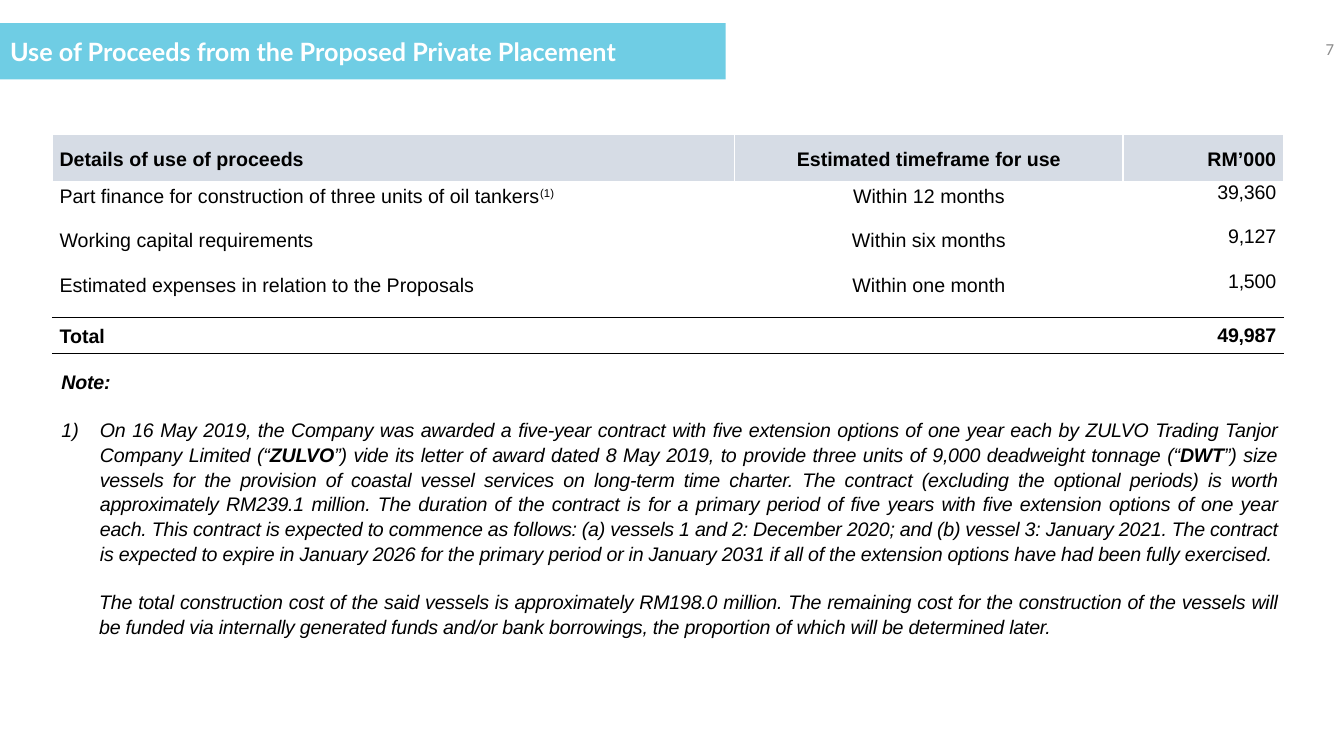
from pptx import Presentation
from pptx import util as u
from pptx.dml.color import RGBColor
from pptx.enum import text
from pptx.oxml import parse_xml
from pptx.oxml.ns import nsdecls

LEFT, CENTER, RIGHT, JUSTIFY = (
    text.PP_ALIGN.LEFT, text.PP_ALIGN.CENTER, text.PP_ALIGN.RIGHT, text.PP_ALIGN.JUSTIFY)
TOP, MIDDLE = text.MSO_ANCHOR.TOP, text.MSO_ANCHOR.MIDDLE

HEADINGS = ["Details of use of proceeds", "Estimated timeframe for use", "RM’000"]
USES = [
    ["Part finance for construction of three units of oil tankers", "Within 12 months", "39,360"],
    ["Working capital requirements", "Within six months", "9,127"],
    ["Estimated expenses in relation to the Proposals", "Within one month", "1,500"],
]
TOTAL = ["Total", "", "49,987"]
CONTRACT = [
    ("On 16 May 2019, the Company was awarded a five-year contract with five extension options "
     "of one year each by ZULVO Trading Tanjor Company Limited (“", False),
    ("ZULVO", True),
    ("”) vide its letter of award dated 8 May 2019, to provide three units of 9,000 deadweight "
     "tonnage (“", False),
    ("DWT", True),
    ("”) size vessels for the provision of coastal vessel services on long-term time charter. "
     "The contract (excluding the optional periods) is worth approximately RM239.1 million. "
     "The duration of the contract is for a primary period of five years with five extension "
     "options of one year each. This contract is expected to commence as follows: (a) vessels 1 "
     "and 2: December 2020; and (b) vessel 3: January 2021. The contract is expected to expire "
     "in January 2026 for the primary period or in January 2031 if all of the extension options "
     "have had been fully exercised.", False),
]
COST = [
    ("The total construction cost of the said vessels is approximately RM198.0 million. "
     "The remaining cost for the construction of the vessels will be funded via internally "
     "generated funds and/or bank borrowings, the proportion of which will be determined later.",
     False),
]


def color(value):
    return RGBColor.from_string(value)


def write(para, words, font="Arial", size=14, ink="000000", bold=False, italic=False,
          spacing=0, baseline=0):
    span = para.add_run()
    span.text = words
    span.font.name, span.font.size = font, u.Pt(size)
    span.font.bold, span.font.italic = bold, italic
    span.font.color.rgb = color(ink)
    properties = span._r.get_or_add_rPr()
    if spacing:
        properties.set("spc", str(spacing))
    if baseline:
        properties.set("baseline", str(baseline))


class ProceedsSlide:
    accent, header_fill, paper, rule = "6FCDE4", "D6DCE5", "FFFFFF", "000000"
    tight = -20

    def __init__(self, deck):
        self.page = deck.slides.add_slide(deck.slide_layouts[5])

    def title(self, words, left, top, width, height):
        box = self.page.shapes.title
        box.left, box.top, box.width, box.height = map(u.Cm, (left, top, width, height))
        box.fill.solid()
        box.fill.fore_color.rgb = color(self.accent)
        box.text_frame.vertical_anchor = MIDDLE
        para = box.text_frame.paragraphs[0]
        para.alignment = LEFT
        write(para, words, font="Lato", size=18, ink=self.paper, bold=True)

    def text_box(self, left, top, width, height, anchor=TOP):
        frame = self.page.shapes.add_textbox(*map(u.Cm, (left, top, width, height))).text_frame
        frame.word_wrap = True
        frame.vertical_anchor = anchor
        return frame

    def page_number(self, number):
        para = self.text_box(26.25, 0.71, 7.62, 1.02, MIDDLE).paragraphs[0]
        para.alignment = RIGHT
        write(para, number, font="Calibri", size=12, ink="8C8C8C")

    def border(self, cell, side):
        line = parse_xml(
            f'<a:{side} {nsdecls("a")} w="12700"><a:solidFill><a:srgbClr val="{self.rule}"/>'
            f'</a:solidFill></a:{side}>')
        properties = cell._tc.get_or_add_tcPr()
        position = len(properties.findall(line.tag[:line.tag.index("}") + 1] + "lnT"))
        properties.insert(position, line)

    def table(self, rows, left, top, widths, heights):
        table = self.page.shapes.add_table(
            len(rows), len(widths), u.Cm(left), u.Cm(top),
            u.Cm(sum(widths)), u.Cm(sum(heights))).table
        table.horz_banding = False
        for column, width in zip(table.columns, widths):
            column.width = u.Cm(width)
        last = len(rows) - 1
        for r, (row, height) in enumerate(zip(rows, heights)):
            table.rows[r].height = u.Cm(height)
            strong = r in (0, last)
            for c, (words, align) in enumerate(zip(row, (LEFT, CENTER, RIGHT))):
                cell = table.cell(r, c)
                cell.fill.solid()
                cell.fill.fore_color.rgb = color(self.paper if r else self.header_fill)
                cell.margin_left = cell.margin_right = u.Cm(0.18)
                cell.margin_top = cell.margin_bottom = u.Cm(0.02 if r and c < 2 else 0)
                cell.vertical_anchor = MIDDLE if strong else TOP
                para = cell.text_frame.paragraphs[0]
                para.alignment = align
                amount = r > 0 and c == 2
                para.line_spacing = 1.0 if amount else 1.15
                if words:
                    write(para, words, bold=strong, spacing=self.tight if amount else 0)
                if r == last:
                    self.border(cell, "lnT")
                if r >= last - 1:
                    self.border(cell, "lnB")
        write(table.cell(1, 0).text_frame.paragraphs[0], "(1)", baseline=30000)
        table.cell(last, 0).merge(table.cell(last, 1))

    def note(self, left, top, width, height):
        frame = self.text_box(left, top, width, height)
        paragraphs = [([("Note:", True)], 0, ""), (CONTRACT, 0.97, "1)"), (COST, 0.95, "")]
        for i, (spans, indent, number) in enumerate(paragraphs):
            para = frame.add_paragraph() if i else frame.paragraphs[0]
            para.alignment = JUSTIFY
            para.line_spacing = 1.05
            if i:
                para.space_before = u.Pt(16.9)
            properties = para._p.get_or_add_pPr()
            properties.set("marL", str(u.Cm(indent)))
            if number:
                properties.set("indent", str(-u.Cm(indent)))
                properties.append(parse_xml(f'<a:buFont {nsdecls("a")} typeface="+mj-lt"/>'))
                properties.append(
                    parse_xml(f'<a:buAutoNum {nsdecls("a")} type="arabicParenR"/>'))
            for words, bold in spans:
                write(para, words, bold=bold, italic=True, spacing=self.tight)


def main():
    deck = Presentation()
    deck.slide_width, deck.slide_height = u.Cm(33.87), u.Cm(19.05)
    slide = ProceedsSlide(deck)
    slide.title("Use of Proceeds from the Proposed Private Placement", 0, 0.58, 18.29, 1.42)
    slide.page_number("7")
    slide.table([HEADINGS, *USES, TOTAL], 1.32, 3.38,
                (17.2, 9.78, 4.04), (1.19, 1.12, 1.12, 1.19, 0.91))
    slide.note(1.3, 9.17, 31.14, 7.44)
    deck.save("out.pptx")


if __name__ == "__main__":
    main()
